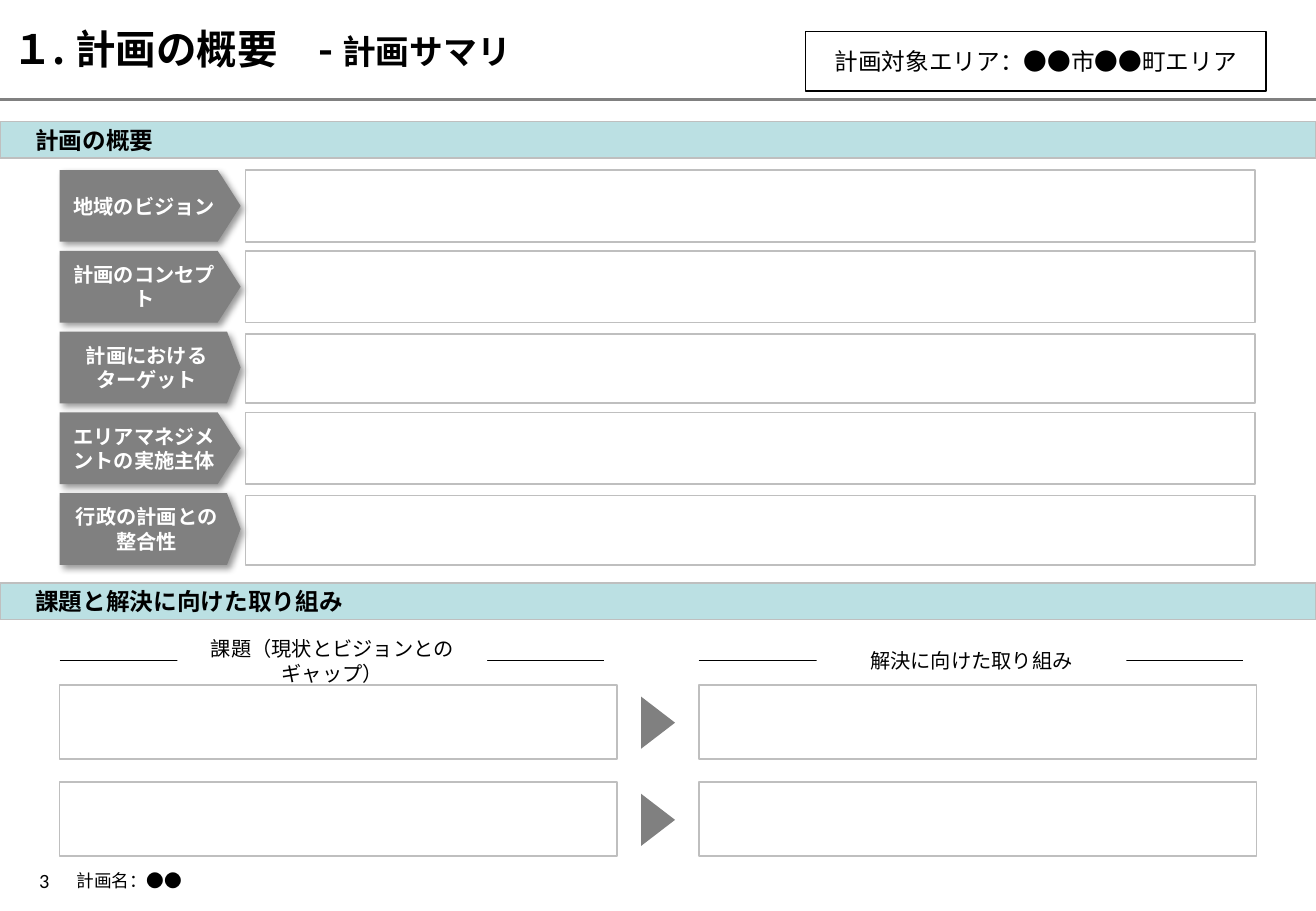
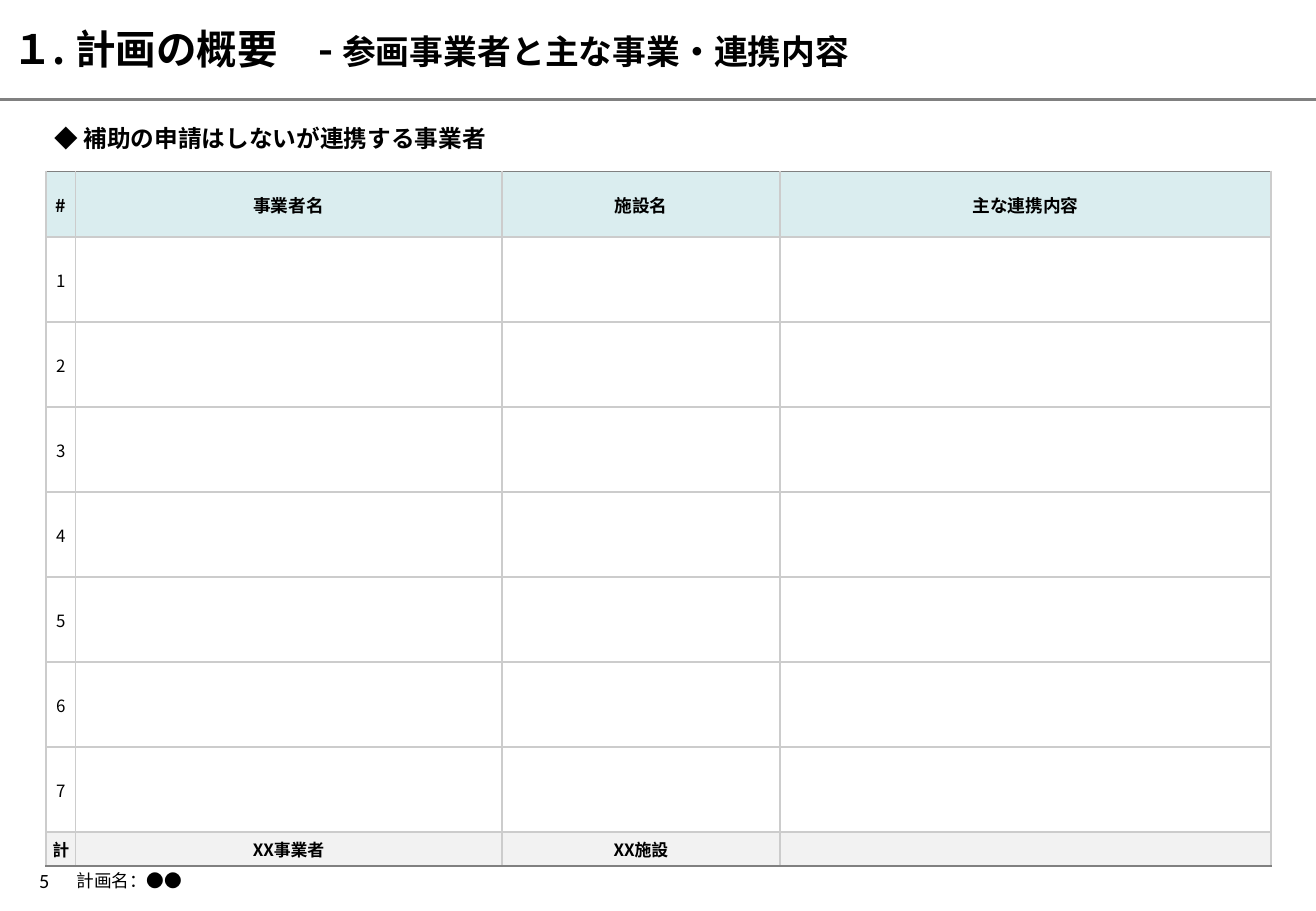
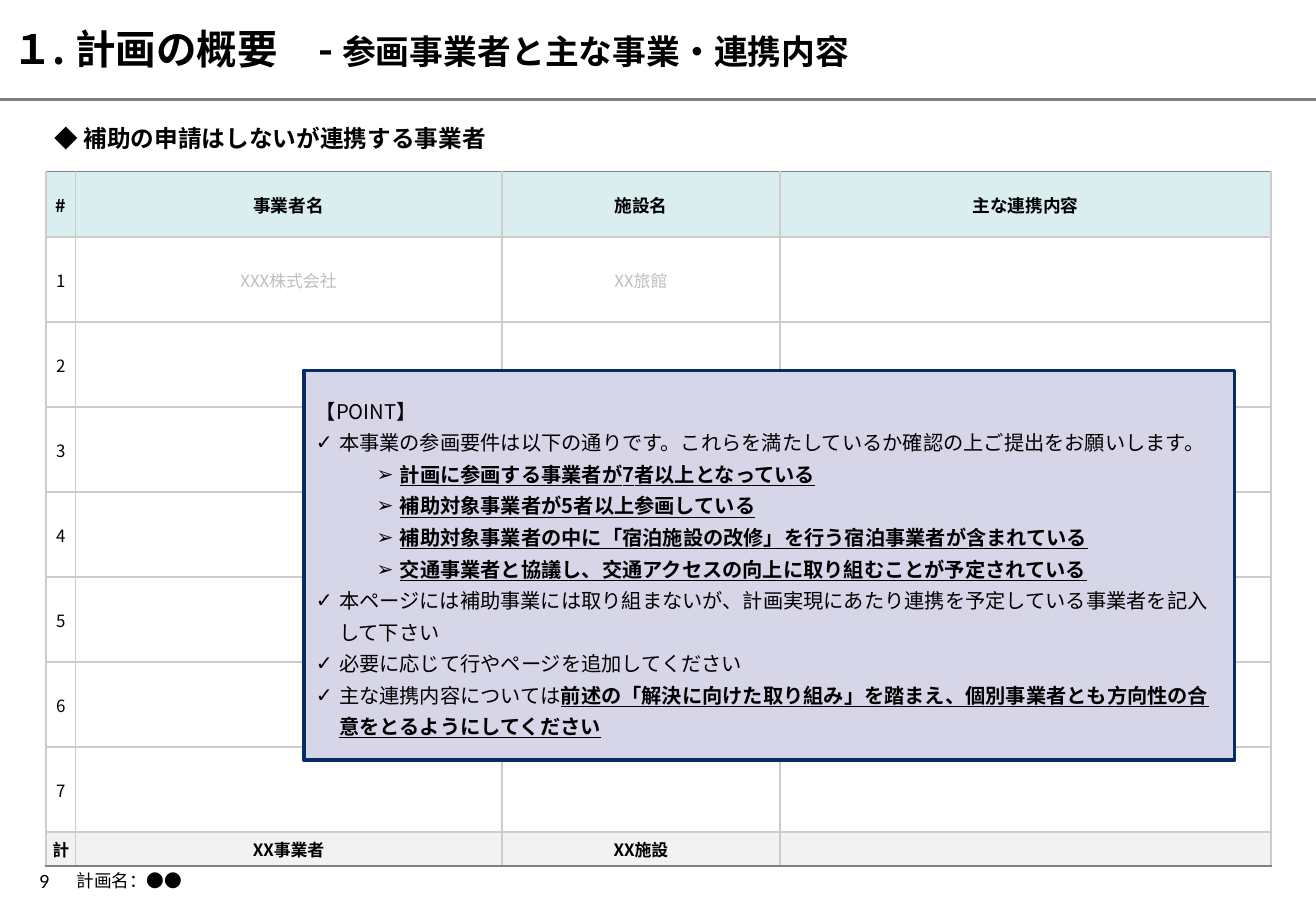
"""Build three slides of an area plan: a summary and two partner tables."""
import dataclasses

import lxml.etree
import pptx
import pptx.dml.color
import pptx.enum.shapes
import pptx.enum.text
import pptx.oxml.ns
import pptx.util

Inches = pptx.util.Inches
Pt = pptx.util.Pt
Kind = pptx.enum.shapes.MSO_SHAPE
Align = pptx.enum.text.PP_ALIGN
Anchor = pptx.enum.text.MSO_ANCHOR
qn = pptx.oxml.ns.qn


@dataclasses.dataclass(frozen=True)
class Theme:
    """Colours, fonts and type sizes of the deck."""
    ink: str = "000000"
    paper: str = "FFFFFF"
    band: str = "BBE0E3"
    head: str = "DAEDEF"
    total: str = "F2F2F2"
    dark: str = "808080"
    edge: str = "BFBFBF"
    grid: str = "CCCCCC"
    note: str = "D6D6E8"
    navy: str = "082C65"
    font: str = "Noto Sans CJK JP"
    foot: str = "Calibri"
    title: float = 24
    sub: float = 20
    lead: float = 14
    text: float = 12
    small: float = 10.5
    cell: float = 10


@dataclasses.dataclass(frozen=True)
class Box:
    """A region in inches."""
    left: float
    top: float
    width: float
    height: float

    def inner(self, left, top, width, height):
        """Return a box placed from this corner."""
        return Box(self.left + left, self.top + top, width, height)

    def sizes(self):
        """Return the four lengths."""
        return [Inches(v) for v in dataclasses.astuple(self)]


T = Theme()
WIDE = 10.83
TITLE = "１. 計画の概要　- "
TIGHT = (0.1, 0.04, 0.1, 0.04)
FLAT = (0, 0, 0, 0)
LABELS = [
    (["地域のビジョン"], 0.32),
    (["計画のコンセプト"], 0.32),
    (["計画における", "ターゲット"], 0.19),
    (["エリアマネジメントの実施主体"], 0.32),
    (["行政の計画との", "整合性"], 0.19),
]
HEADS = ["#", "事業者名", "施設名", "主な連携内容"]
TOTALS = ["計", "XX事業者", "XX施設", ""]
STRONG = {"bold": True, "underline": True}
POINTS = [
    (None, 0, [("【POINT】", {})]),
    ("✓", 0, [("本事業の参画要件は以下の通りです。これらを満たしているか確認の上ご提出をお願いします。", {})]),
    ("➢", 1, [("計画に参画する事業者が7者以上となっている", STRONG)]),
    ("➢", 1, [("補助対象事業者が5者以上参画している", STRONG)]),
    ("➢", 1, [("補助対象事業者の中に「宿泊施設の改修」を行う宿泊事業者が含まれている", STRONG)]),
    ("➢", 1, [("交通事業者と協議し、交通アクセスの向上に取り組むことが予定されている", STRONG)]),
    ("✓", 0, [("本ページには補助事業には取り組まないが、計画実現にあたり連携を予定している事業者を記入して下さい", {})]),
    ("✓", 0, [("必要に応じて行やページを追加してください", {})]),
    ("✓", 0, [("主な連携内容については", {}),
              ("前述の「解決に向けた取り組み」を踏まえ、個別事業者とも方向性の合意をとるようにしてください", STRONG)]),
]


def put(item, vals):
    """Set attributes from a dict."""
    for key, val in vals.items():
        setattr(item, key, val)


def rgb(tone):
    """Return a colour value."""
    return pptx.dml.color.RGBColor.from_string(tone)


def add(root, tag, **vals):
    """Append an XML child."""
    return lxml.etree.SubElement(root, qn(tag), vals)


def pad(item, edges):
    """Set the four insets of a frame or cell."""
    keys = ("margin_left", "margin_top", "margin_right", "margin_bottom")
    put(item, dict(zip(keys, map(Inches, edges))))


def place(item, box):
    """Move an item to a box."""
    put(item, dict(zip(("left", "top", "width", "height"), box.sizes())))


def say(par, text, size, tone=T.ink, name=T.font, **vals):
    """Add one styled run."""
    run = par.add_run()
    run.text = text
    put(run.font, {"name": name, "size": Pt(size), "bold": False, **vals})
    run.font.color.rgb = rgb(tone)
    add(run._r.get_or_add_rPr(), "a:ea", typeface=T.font)


def write(frame, lines, size, align=Align.LEFT, edges=TIGHT, **vals):
    """Fill a frame with plain lines."""
    put(frame, {"word_wrap": True, "vertical_anchor": Anchor.MIDDLE})
    pad(frame, edges)
    for at, line in enumerate(lines):
        par = frame.add_paragraph() if at else frame.paragraphs[0]
        par.alignment = align
        say(par, line, size, **vals)


def paint(shape, fill=None, edge=None, width=1):
    """Set fill and outline."""
    for coat, tone in ((shape.fill, fill), (shape.line.fill, edge)):
        if tone:
            coat.solid()
            coat.fore_color.rgb = rgb(tone)
        else:
            coat.background()
    if edge:
        shape.line.width = Pt(width)


def draw(slide, box, kind=Kind.RECTANGLE, fill=None, edge=None):
    """Add a preset shape."""
    shape = slide.shapes.add_shape(kind, *box.sizes())
    shape.shadow.inherit = False
    paint(shape, fill, edge)
    return shape


def rule(slide, left, top, width, tone, weight):
    """Add a level line."""
    ends = map(Inches, (left, top, left + width, top))
    line = slide.shapes.add_connector(pptx.enum.shapes.MSO_CONNECTOR.STRAIGHT, *ends)
    line.line.color.rgb = rgb(tone)
    line.line.width = Pt(weight)
    add(line.element.spPr, "a:effectLst")
    return line


def label(slide, box, text, size, **vals):
    """Add a text box of one line."""
    frame = slide.shapes.add_textbox(*box.sizes()).text_frame
    write(frame, [text], size, **vals)
    return frame


def start(deck, kind, sub, page):
    """Add a slide with title and footer."""
    slide = deck.slides.add_slide(deck.slide_layouts[kind])
    title = slide.shapes.title
    place(title, Box(0, 0, WIDE, 0.8))
    frame = title.text_frame
    frame.auto_size = pptx.enum.text.MSO_AUTO_SIZE.NONE
    write(frame, [TITLE], T.title, edges=(0.1, 0.05, 0.1, 0.05), bold=True)
    say(frame.paragraphs[0], sub, T.sub, bold=True)
    label(slide, Box(0.63, 7.12, 4.45, 0.25), "計画名：●●", T.small, edges=FLAT, name=T.foot)
    num = label(slide, Box(0.23, 7.13, 0.27, 0.23), page, T.text,
                align=Align.CENTER, edges=FLAT, name=T.foot)
    num.word_wrap = False
    return slide


def share(deck, slide):
    """Put the title rule on the master."""
    line = rule(slide, 0, 0.82, WIDE, T.dark, 1.5).element
    line.xpath(".//p:cNvPr")[0].set("id", "99")
    deck.slide_master.shapes.element.append(line)


def band(slide, top, text):
    """Add a section band."""
    bar = draw(slide, Box(0, top, WIDE, 0.3), fill=T.band, edge=T.edge)
    write(bar.text_frame, [text], T.lead, edges=(0.29, 0.04, 0.1, 0.04), bold=True)


def vision(slide, box):
    """Add the rows of tags and empty fields."""
    high = 0.59
    step = (box.height - high) / (len(LABELS) - 1)
    for at, (lines, point) in enumerate(LABELS):
        row = box.inner(0, at * step, box.width, high)
        tag = draw(slide, row.inner(0, 0, 1.49, high), Kind.PENTAGON, T.dark)
        tag.adjustments[0] = point
        glow = add(tag.element.spPr.find(qn("a:effectLst")), "a:outerShdw", blurRad="50800",
                   dist="38100", dir="2700000", algn="tl", rotWithShape="0")
        add(add(glow, "a:srgbClr", val=T.ink), "a:alpha", val="40000")
        write(tag.text_frame, lines, T.text, Align.CENTER, tone=T.paper, bold=True)
        drop = 0.02 * (len(lines) - 1)
        draw(slide, row.inner(1.53, drop, box.width - 1.53, high - drop), edge=T.edge)


def pane(slide, box, text):
    """Add a ruled heading over two fields."""
    rule(slide, box.left, box.top + 0.19, 4.48, T.ink, 0.75)
    tag = draw(slide, box.inner(0.97, 0, 2.55, 0.38), fill=T.paper)
    write(tag.text_frame, [text], T.text, Align.CENTER)
    high = 0.61
    for top in (box.height - high - 0.8, box.height - high):
        draw(slide, box.inner(0, top, box.width, high), edge=T.edge)


def issues(slide, box):
    """Add both panes and the arrows between them."""
    wide = 4.59
    pane(slide, box.inner(0, 0, wide, box.height), "課題（現状とビジョンとのギャップ）")
    pane(slide, box.inner(box.width - wide, 0, wide, box.height), "解決に向けた取り組み")
    for top in (0.56, 1.36):
        mark = draw(slide, box.inner(4.71, top, 0.43, 0.28), Kind.ISOSCELES_TRIANGLE, T.dark)
        mark.rotation = 90


def fill(cell, text, size, back, tone, bold, tops):
    """Style and fill one table cell."""
    pad(cell, (0.01, 0.01, 0.01, 0))
    cell.vertical_anchor = Anchor.MIDDLE
    props = cell._tc.get_or_add_tcPr()
    for side in "LRTB":
        line = add(props, "a:ln" + side, w=str(Pt(1)))
        add(add(line, "a:solidFill"), "a:srgbClr", val=tops.get(side, T.grid))
    if back:
        cell.fill.solid()
        cell.fill.fore_color.rgb = rgb(back)
    else:
        cell.fill.background()
    par = cell.text_frame.paragraphs[0]
    par.alignment = Align.CENTER
    if text:
        say(par, text, size, tone, bold=bold)
    else:
        add(par._p, "a:endParaRPr", sz=str(size * 100))


def grid(slide, box, first):
    """Add the partner table."""
    body = [[str(n), "", "", ""] for n in range(1, 8)]
    body[0][1:3] = first
    rows = [HEADS, *body, TOTALS]
    last = len(rows) - 1
    table = slide.shapes.add_table(len(rows), len(HEADS), *box.sizes()).table
    put(table, {"first_row": False, "horz_banding": False})
    for col, wide in zip(table.columns, (0.24, 3.51, 2.29, 4.04)):
        col.width = Inches(wide)
    for at, texts in enumerate(rows):
        table.rows[at].height = Inches({0: 0.54, last: 0.28}.get(at, 0.7))
        size = T.cell if at else T.small
        back = {0: T.head, last: T.total}.get(at)
        tops = {0: {"T": T.dark}, last: {"B": T.dark}}.get(at, {})
        for col, text in enumerate(texts):
            tone = T.edge if col and 0 < at < last else T.ink
            fill(table.cell(at, col), text, size, back, tone, bool(back), tops)


def points(slide, box):
    """Turn the body placeholder into the list of points."""
    body = slide.placeholders[1]
    slide.shapes.element.append(body.element)
    place(body, box)
    paint(body, T.note, T.navy, 2.25)
    frame = body.text_frame
    put(frame, {"word_wrap": True, "vertical_anchor": Anchor.MIDDLE,
                "auto_size": pptx.enum.text.MSO_AUTO_SIZE.NONE})
    pad(frame, TIGHT)
    for at, (sign, level, runs) in enumerate(POINTS):
        par = frame.add_paragraph() if at else frame.paragraphs[0]
        put(par, {"level": level, "line_spacing": 1.3, "space_before": Pt(0)})
        props = par._p.get_or_add_pPr()
        hang = Inches(0.19) if sign else 0
        props.set("marL", str(hang + Inches(0.5) * level))
        props.set("indent", str(-hang))
        if sign:
            add(props, "a:buChar", char=sign)
        else:
            add(props, "a:buNone")
        for text, vals in runs:
            say(par, text, T.text, **vals)


def sheet(deck, kind, page, first):
    """Add a slide with the partner table."""
    slide = start(deck, kind, "参画事業者と主な事業・連携内容", page)
    label(slide, Box(0.35, 0.97, 9.46, 0.34), "◆ 補助の申請はしないが連携する事業者",
          T.lead, edges=(0.1, 0.05, 0.1, 0.05), bold=True)
    grid(slide, Box(0.38, 1.41, 10.08, 5.7), first)
    return slide


def brief(deck):
    """Add the summary slide."""
    slide = start(deck, 5, "計画サマリ", "3")
    share(deck, slide)
    area = draw(slide, Box(6.63, 0.26, 3.79, 0.49), edge=T.ink)
    write(area.text_frame, ["計画対象エリア：●●市●●町エリア"], T.lead, Align.CENTER)
    band(slide, 1, "計画の概要")
    vision(slide, Box(0.49, 1.4, 9.84, 3.25))
    band(slide, 4.8, "課題と解決に向けた取り組み")
    issues(slide, Box(0.49, 5.25, 9.85, 1.8))


def main():
    """Build and save the deck."""
    deck = pptx.Presentation()
    put(deck, {"slide_width": Inches(WIDE), "slide_height": Inches(7.5)})
    brief(deck)
    sheet(deck, 5, "5", ["", ""])
    points(sheet(deck, 1, "9", ["XXX株式会社", "XX旅館"]), Box(2.5, 3.05, 7.66, 3.21))
    deck.save("out.pptx")


if __name__ == "__main__":
    main()
